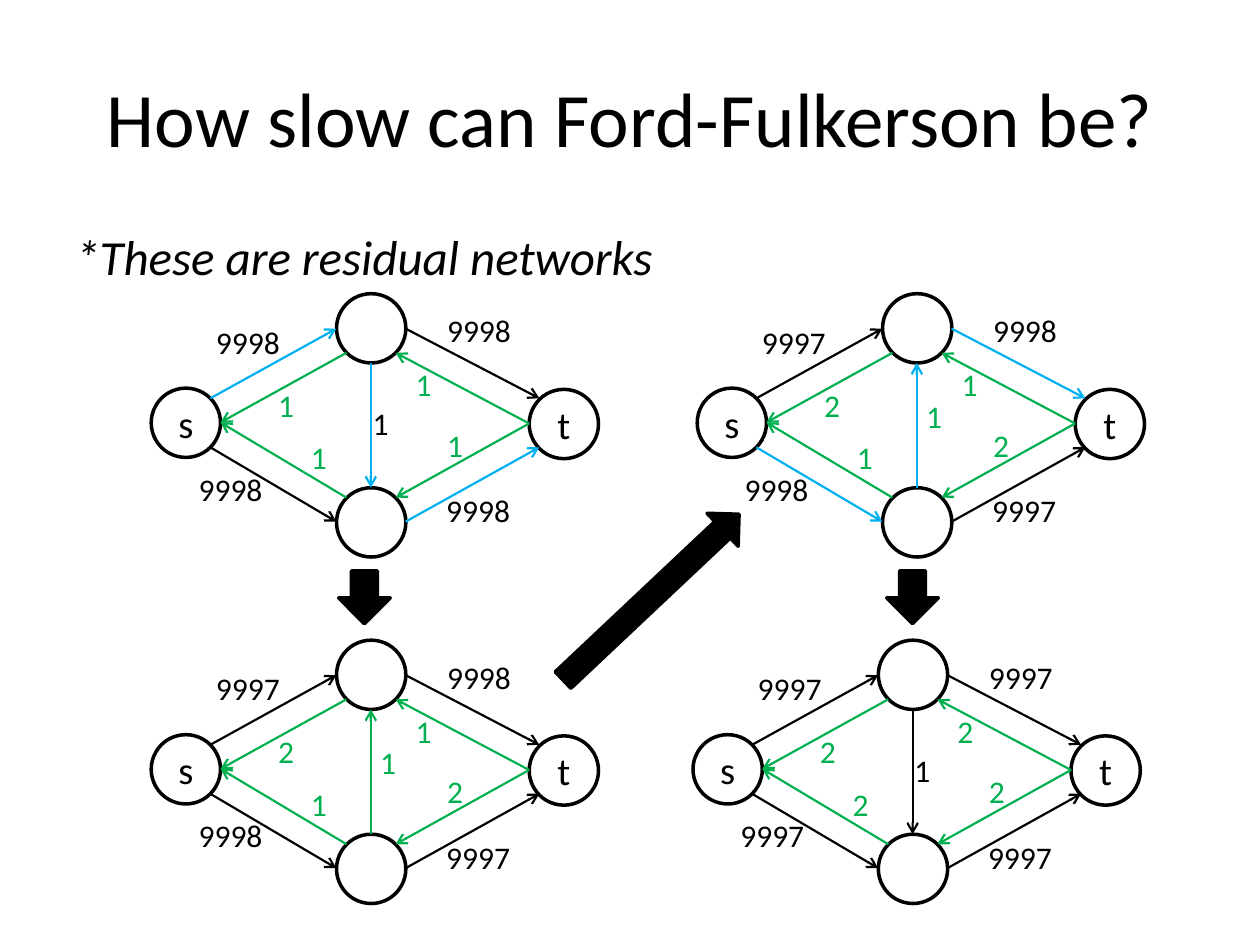
from typing import NamedTuple

from lxml.etree import SubElement
from pptx import Presentation
from pptx.dml.color import RGBColor
from pptx.enum.shapes import MSO_CONNECTOR as Link, MSO_SHAPE as Kind
from pptx.enum.text import MSO_ANCHOR as Anchor, PP_ALIGN as Align
from pptx.oxml.ns import qn
from pptx.util import Pt

BLACK, GREEN, BLUE = "000000", "00B050", "00B0F0"
SIZE = 39.6  # node diameter


class Edge(NamedTuple):
    start: tuple[float, float]
    end: tuple[float, float]
    label: tuple[float, float]
    color: str


class Net(NamedTuple):
    left: float
    top: float
    caps: dict[str, int]
    path_edges: tuple[str, ...] = ()


class Arrow(NamedTuple):
    kind: Kind
    left: float
    top: float
    width: float
    height: float
    turn: float = 0


# Nodes and edges, relative to the corner of a network; u is up, d is down
NODES = [("s", 0, 54), ("", 105.9, 0), ("", 105.9, 110.9), ("t", 216, 54.7)]
EDGES = {
    "su": Edge((33.8, 59.8), (105.8, 20), (29.9, 13), BLACK),
    "sd": Edge((33.8, 87.8), (105.8, 130.3), (20, 97.2), BLACK),
    "ut": Edge((145.4, 20), (221.8, 59.8), (162, 6.5), BLACK),
    "dt": Edge((145.4, 130.3), (221.8, 87.8), (161.5, 109.4), BLACK),
    "us": Edge((111.6, 33.8), (39.6, 73.6), (65.5, 49), GREEN),
    "td": Edge((216, 74.2), (139.7, 116.6), (162, 72), GREEN),
    "ds": Edge((111.6, 116.6), (39.6, 73.6), (84.2, 79.2), GREEN),
    "tu": Edge((216, 74.2), (139.7, 33.8), (144, 37.4), GREEN),
    "ud": Edge((125.5, 39.6), (125.5, 110.9), (119.5, 59.8), BLACK),
    "du": Edge((125.5, 110.9), (125.5, 39.6), (123.8, 55.4), GREEN),
}
NETS = [
    Net(86.4, 167.8, dict(su=9998, sd=9998, ut=9998, dt=9998,
                          us=1, td=1, ds=1, tu=1, ud=1), ("su", "ud", "dt")),
    Net(86.4, 365.8, dict(su=9997, sd=9998, ut=9998, dt=9997,
                          us=2, td=2, ds=1, tu=1, du=1)),
    Net(398.4, 167.8, dict(su=9997, sd=9998, ut=9998, dt=9997,
                           us=2, td=2, ds=1, tu=1, du=1), ("sd", "du", "ut")),
    Net(396, 365.8, dict(su=9997, sd=9997, ut=9997, dt=9997,
                         us=2, td=2, ds=2, tu=2, ud=1)),
]
ARROWS = [
    Arrow(Kind.DOWN_ARROW, 193.5, 326.2, 29.5, 30.2),
    Arrow(Kind.DOWN_ARROW, 506.7, 326.2, 29.5, 30.2),
    Arrow(Kind.RIGHT_ARROW, 303, 328.3, 138.2, 25.9, 316.7),
]


def rgb(code: str) -> RGBColor:
    return RGBColor.from_string(code)


def write(shape, text: str, size: float, color: str = BLACK,
          align=Align.LEFT, anchor=Anchor.TOP, wrap=True, slant=False) -> None:
    frame = shape.text_frame
    frame.word_wrap = wrap
    frame.vertical_anchor = anchor
    line = frame.paragraphs[0]
    line.alignment = align
    run = line.add_run()
    run.text = text
    font = run.font
    font.name, font.size, font.italic = "Calibri", Pt(size), slant
    font.color.rgb = rgb(color)


def add_text(shapes, box: tuple, text: str, size: float, **style) -> None:
    write(shapes.add_textbox(*map(Pt, box)), text, size, **style)


def add_shape(shapes, kind, box: tuple, fill: str = ""):
    shape = shapes.add_shape(kind, *map(Pt, box))
    shape.shadow.inherit = False
    if fill:
        shape.fill.solid()
        shape.fill.fore_color.rgb = rgb(fill)
    else:
        shape.fill.background()
    shape.line.color.rgb = rgb(BLACK)
    shape.line.width = Pt(2)
    return shape


def add_edge(shapes, net: Net, edge: Edge, cap: int, color: str) -> None:
    ends = [Pt(base + move) for point in (edge.start, edge.end)
            for base, move in zip((net.left, net.top), point)]
    link = shapes.add_connector(Link.STRAIGHT, *ends)
    link.line.color.rgb = rgb(color)
    link.line.width = Pt(1.25)
    SubElement(link.line._get_or_add_ln(), qn("a:tailEnd"), type="arrow")
    SubElement(link._element.spPr, qn("a:effectLst"))
    x, y = edge.label
    width = 51.1 if cap > 9 else 23.8
    add_text(shapes, (net.left + x, net.top + y, width, 28.8), str(cap), 18,
             color=edge.color, wrap=False)


def add_net(slide, net: Net) -> None:
    shapes = slide.shapes.add_group_shape().shapes
    for name, x, y in NODES:
        node = add_shape(shapes, Kind.OVAL,
                         (net.left + x, net.top + y, SIZE, SIZE))
        if name:
            write(node, name, 22, align=Align.CENTER, anchor=Anchor.MIDDLE)
    for key, cap in net.caps.items():
        edge = EDGES[key]
        color = BLUE if key in net.path_edges else edge.color
        add_edge(shapes, net, edge, cap, color)


def main() -> None:
    deck = Presentation()
    deck.slide_width, deck.slide_height = Pt(720), Pt(540)
    slide = deck.slides.add_slide(deck.slide_layouts[6])

    # Heading and note
    add_text(slide.shapes, (36, 21.6, 648, 90),
             "How slow can Ford-Fulkerson be?", 44,
             align=Align.CENTER, anchor=Anchor.MIDDLE)
    add_text(slide.shapes, (36, 126, 648, 41.8),
             "*These are residual networks", 28, slant=True)

    # Residual networks
    for net in NETS:
        add_net(slide, net)

    # Steps from one network to the next
    for arrow in ARROWS:
        shape = add_shape(slide.shapes, arrow.kind, arrow[1:5], BLACK)
        shape.rotation = arrow.turn

    deck.save("out.pptx")


if __name__ == "__main__":
    main()
